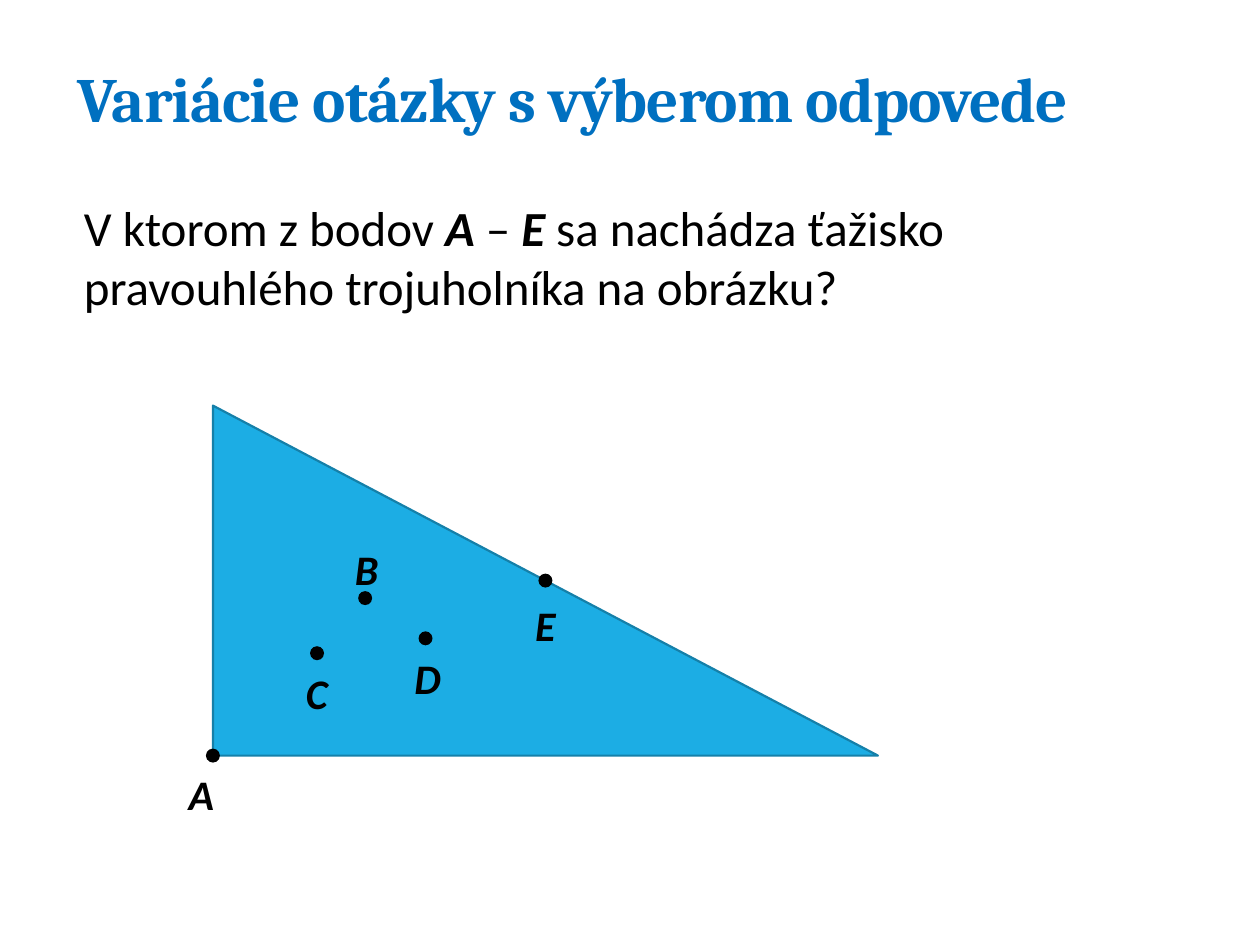
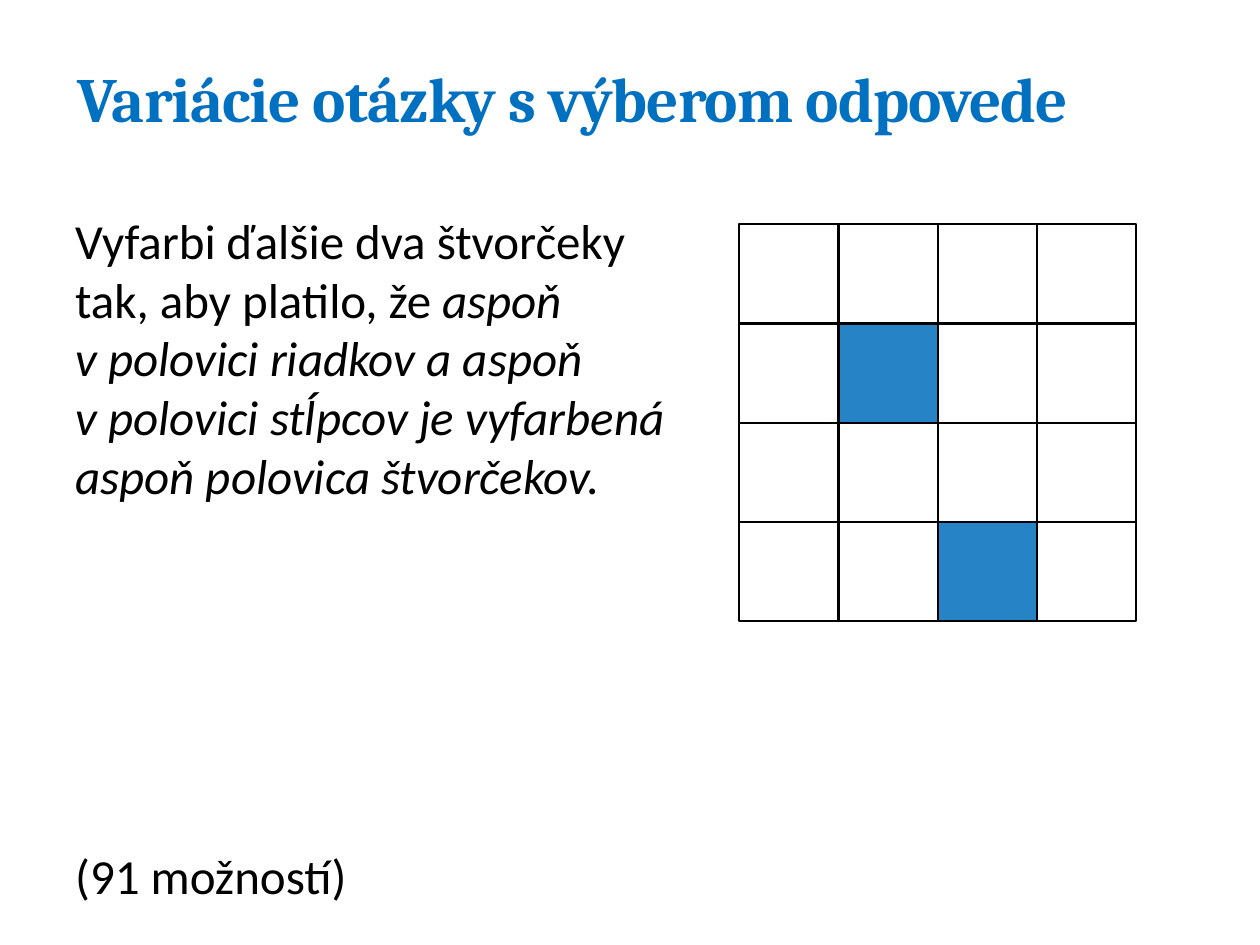
import pptx
import pptx.dml.color
import pptx.enum.shapes
import pptx.enum.text
import pptx.util

Pt = pptx.util.Pt
SHAPES = pptx.enum.shapes.MSO_SHAPE

BLACK = "000000"
TITLE_BLUE = "0070C0"
TRIANGLE_FILL, TRIANGLE_EDGE = "1CADE4", "1580A9"
CELL_BLUE = "2683C6"

TITLE = "Variácie otázky s výberom odpovede"
TITLE_BOX = (37, 37, 641, 51)

BODY_FONT = {"name": "Calibri", "size": Pt(28), "bold": False, "italic": False}
ITALIC = {"italic": True}
POINT_NAME = {"bold": True, "italic": True}
LABEL_FONT = BODY_FONT | POINT_NAME | {"size": Pt(24)}
TITLE_FONT = {"name": "Cambria", "size": Pt(36), "bold": True}

DOT = 8
LABEL_SIZE = (34, 36)
# name: (dot centre, top left of label), both relative to the triangle's box
POINTS = {
    "A": ((0, 200), (-21, 204)),
    "B": ((87, 110), (74, 75.5)),
    "C": ((59.5, 141.5), (46, 146)),
    "D": ((121.5, 133), (108, 137.5)),
    "E": ((190, 100), (177, 107)),
}

GRID_COUNT = 4
COLOURED_CELLS = {(1, 1), (3, 2)}  # (row, column)


def rgb(hex_string):
    return pptx.dml.color.RGBColor.from_string(hex_string)


def add_text(slide, box, paragraphs, font, colour=BLACK, side_inset=7.2):
    """Each paragraph is a list of (text, font changes); a newline breaks the line."""
    frame = slide.shapes.add_textbox(*map(Pt, box)).text_frame
    settings = {
        "word_wrap": True,
        "vertical_anchor": pptx.enum.text.MSO_ANCHOR.TOP,
        "margin_left": Pt(side_inset),
        "margin_right": Pt(side_inset),
    }
    for name, value in settings.items():
        setattr(frame, name, value)
    for index, pieces in enumerate(paragraphs):
        paragraph = frame.add_paragraph() if index else frame.paragraphs[0]
        for text, changes in pieces:
            for line_index, line in enumerate(text.split("\n")):
                if line_index:
                    paragraph.add_line_break()
                run = paragraph.add_run()
                run.text = line
                for name, value in (font | changes).items():
                    setattr(run.font, name, value)
                run.font.color.rgb = rgb(colour)
    return frame.paragraphs


def add_figure(shapes, kind, box, fill=None, line=None):
    figure = shapes.add_shape(kind, *map(Pt, box))
    figure.shadow.inherit = False
    if fill:
        figure.fill.solid()
        figure.fill.fore_color.rgb = rgb(fill)
    else:
        figure.fill.background()
    if line:
        figure.line.color.rgb = rgb(line)
        figure.line.width = Pt(1.25)
    else:
        figure.line.fill.background()


def add_titled_slide(deck):
    slide = deck.slides.add_slide(deck.slide_layouts[6])
    heading = add_text(slide, TITLE_BOX, [[(TITLE, {})]], TITLE_FONT, TITLE_BLUE)[0]
    heading.line_spacing = 0.85
    for run in heading.runs:
        run.font._element.set("spc", "-50")
    return slide


def add_body(slide, box, paragraphs):
    body = add_text(slide, box, paragraphs, BODY_FONT, side_inset=0)
    for paragraph in body:
        paragraph.space_after = Pt(12)
    return body


def add_triangle(slide, box):
    left, top = box[:2]
    add_figure(slide.shapes, SHAPES.RIGHT_TRIANGLE, box, TRIANGLE_FILL, TRIANGLE_EDGE)
    for name, ((x, y), (label_x, label_y)) in POINTS.items():
        add_text(slide, (left + label_x, top + label_y, *LABEL_SIZE),
                 [[(name, {})]], LABEL_FONT)
        add_figure(slide.shapes, SHAPES.OVAL,
                   (left + x - DOT / 2, top + y - DOT / 2, DOT, DOT), BLACK)


def add_square_grid(slide, left, top, side):
    cell = side / GRID_COUNT
    grid = slide.shapes.add_group_shape()
    for row in range(GRID_COUNT):
        for column in range(GRID_COUNT):
            fill = CELL_BLUE if (row, column) in COLOURED_CELLS else None
            add_figure(grid.shapes, SHAPES.RECTANGLE,
                       (left + column * cell, top + row * cell, cell, cell), fill, BLACK)


def build_centroid_slide(deck):
    slide = add_titled_slide(deck)
    add_triangle(slide, (121.7, 231.8, 380, 200))
    add_body(slide, (48, 109.5, 672, 42), [[
        ("V ktorom z bodov ", {}),
        ("A", POINT_NAME),
        (" – ", {}),
        ("E", POINT_NAME),
        (" sa nachádza ťažisko\npravouhlého trojuholníka na obrázku?", {}),
    ]])


def build_colouring_slide(deck):
    slide = add_titled_slide(deck)
    task, answer = add_body(slide, (43, 116.6, 345.6, 402.5), [
        [("Vyfarbi ďalšie dva štvorčeky tak, aby platilo, že ", {}),
         ("aspoň\nv polovici riadkov a aspoň\nv polovici stĺpcov je vyfarbená "
          "aspoň polovica štvorčekov.", ITALIC)],
        [("(91 možností)", {})],
    ])
    answer.space_before = Pt(183)
    add_square_grid(slide, 422.5, 128.2, 226.8)


def main():
    deck = pptx.Presentation()
    deck.slide_width, deck.slide_height = Pt(720), Pt(540)
    build_centroid_slide(deck)
    build_colouring_slide(deck)
    deck.save("out.pptx")


if __name__ == "__main__":
    main()
